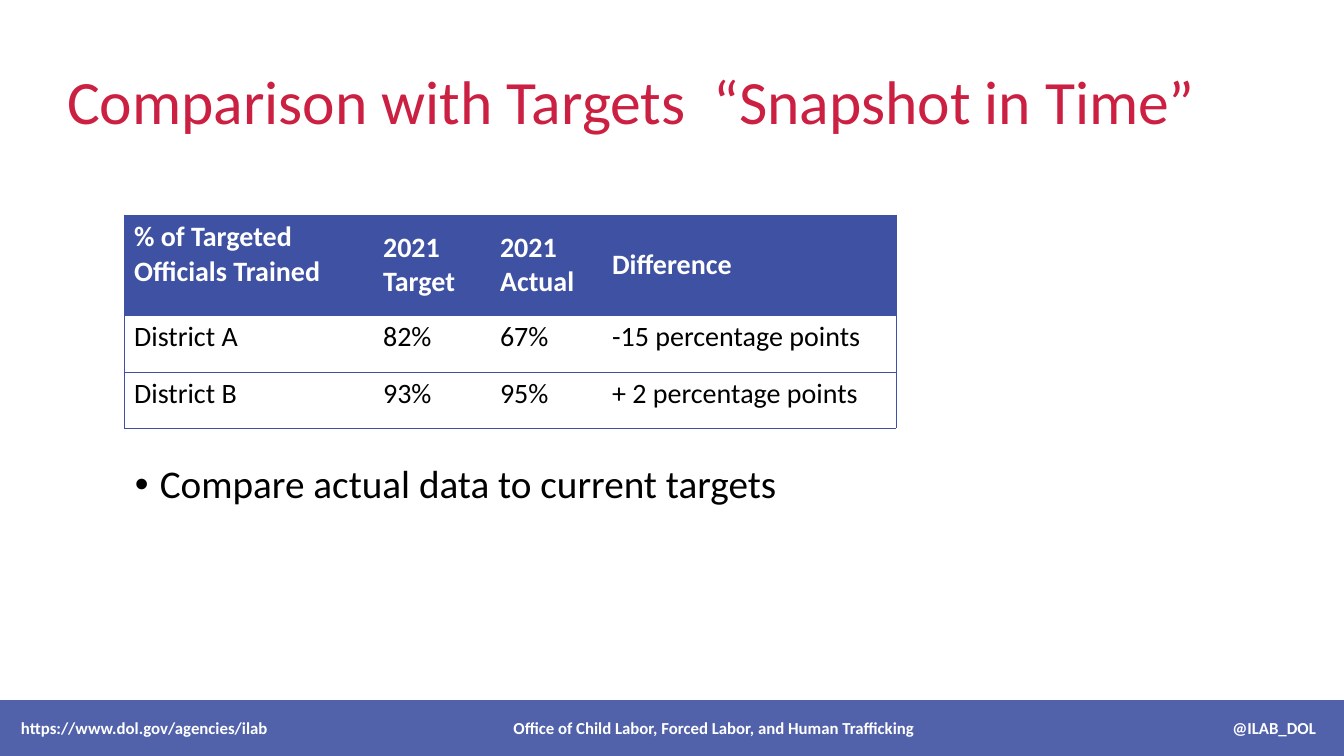
from lxml.etree import SubElement
from pptx import Presentation
from pptx.dml.color import RGBColor
from pptx.enum.shapes import MSO_SHAPE
from pptx.enum.text import MSO_ANCHOR, MSO_AUTO_SIZE, PP_ALIGN
from pptx.oxml import parse_xml
from pptx.oxml.ns import nsdecls, qn
from pptx.util import Pt

EMU_PER_PX = 914400 / 100.8
BLUE = RGBColor(0x3F, 0x51, 0xA2)
RED = RGBColor(0xCB, 0x20, 0x42)
WHITE = RGBColor(0xFF, 0xFF, 0xFF)
BLACK = RGBColor(0x00, 0x00, 0x00)
FONT = "Calibri"
PLAIN_TABLE_STYLE = "{2D5ABB26-0587-4C30-8999-92F81FD0307C}"
COLUMN_WIDTHS = (249, 117, 112, 294)
ROW_HEIGHTS = (100, 57, 56)
TABLE_ROWS = (
    ("% of Targeted Officials Trained", "2021\nTarget", "2021\nActual", "Difference"),
    ("District A", "82%", "67%", "-15 percentage points"),
    ("District B", "93%", "95%", "+ 2 percentage points"),
)
FOOTER_TEXTS = (
    "https://www.dol.gov/agencies/ilab",
    "Office of Child Labor, Forced Labor, and Human Trafficking",
    "@ILAB_DOL",
)


def px(length):
    return round(length * EMU_PER_PX)


def box_emu(box):
    return [px(length) for length in box]


def set_attributes(target, values):
    for name, value in values.items():
        setattr(target, name, value)


def write_text(text_frame, text, size, color, bold=False, **paragraph_format):
    text_frame.text = text
    for paragraph in text_frame.paragraphs:
        set_attributes(paragraph, {"alignment": PP_ALIGN.LEFT, **paragraph_format})
        for run in paragraph.runs:
            set_attributes(run.font, {"name": FONT, "size": Pt(size), "bold": bold})
            run.font.color.rgb = color


def add_title(slide, box):
    title = slide.shapes.title
    set_attributes(title, dict(zip(("left", "top", "width", "height"), box_emu(box))))
    set_attributes(title.text_frame, {
        "word_wrap": True,
        "auto_size": MSO_AUTO_SIZE.NONE,
        "vertical_anchor": MSO_ANCHOR.MIDDLE,
    })
    write_text(title.text_frame, "Comparison with Targets  “Snapshot in Time”",
               44, RED, line_spacing=0.9)


def add_cell_borders(cell, sides):
    properties = cell._tc.get_or_add_tcPr()
    for position, side in enumerate(sides):
        properties.insert(position, parse_xml(
            f'<a:ln{side} {nsdecls("a")} w="{Pt(0.5)}"><a:solidFill>'
            f'<a:srgbClr val="{BLUE}"/></a:solidFill></a:ln{side}>'))


def add_targets_table(slide, left, top):
    box = (left, top, sum(COLUMN_WIDTHS), sum(ROW_HEIGHTS))
    frame = slide.shapes.add_table(len(ROW_HEIGHTS), len(COLUMN_WIDTHS), *box_emu(box))
    table = frame.table
    table._tbl.tblPr.find(qn("a:tableStyleId")).text = PLAIN_TABLE_STYLE
    set_attributes(table, {"first_row": False, "horz_banding": False})
    for column, width in zip(table.columns, COLUMN_WIDTHS):
        column.width = px(width)
    for row, height in zip(table.rows, ROW_HEIGHTS):
        row.height = px(height)
    last_column = len(COLUMN_WIDTHS) - 1
    for row_index, texts in enumerate(TABLE_ROWS):
        header = row_index == 0
        for column_index, text in enumerate(texts):
            cell = table.cell(row_index, column_index)
            write_text(cell.text_frame, text, 20, WHITE if header else BLACK, header)
            centred = header and column_index > 0
            cell.vertical_anchor = MSO_ANCHOR.MIDDLE if centred else MSO_ANCHOR.TOP
            if header:
                cell.fill.solid()
                cell.fill.fore_color.rgb = BLUE
            else:
                cell.fill.background()
            sides = ["L"] if column_index == 0 else []
            sides += ["R"] if column_index == last_column else []
            add_cell_borders(cell, sides + ["T", "B"])


def add_bullet(slide, box, text):
    text_frame = slide.shapes.add_textbox(*box_emu(box)).text_frame
    text_frame.word_wrap = True
    write_text(text_frame, text, 28, BLACK, line_spacing=0.9)
    properties = text_frame.paragraphs[0]._p.get_or_add_pPr()
    properties.set("marL", str(px(25)))
    properties.set("indent", str(px(-25)))
    SubElement(properties, qn("a:buFont"), typeface="Arial")
    SubElement(properties, qn("a:buChar"), char="•")


def add_footer(slide, box):
    margin = 21
    bar = slide.shapes.add_shape(MSO_SHAPE.RECTANGLE, *box_emu(box))
    bar.shadow.inherit = False
    bar.line.fill.background()
    bar.fill.solid()
    bar.fill.fore_color.rgb = BLUE
    color = bar.fill._xPr.find(qn("a:solidFill"))[0]
    SubElement(color, qn("a:alpha"), val="90000")
    set_attributes(bar.text_frame, {
        "word_wrap": True,
        "margin_left": px(margin),
        "margin_right": px(margin),
        "vertical_anchor": MSO_ANCHOR.MIDDLE,
    })
    write_text(bar.text_frame, "\t".join(FOOTER_TEXTS), 12, WHITE, True)
    properties = bar.text_frame.paragraphs[0]._p.get_or_add_pPr()
    tabs = SubElement(properties, qn("a:tabLst"))
    for position, alignment in ((714, "ctr"), (1316, "r")):
        SubElement(tabs, qn("a:tab"), pos=str(px(position - margin)), algn=alignment)


def main():
    presentation = Presentation()
    set_attributes(presentation, {"slide_width": px(1344), "slide_height": px(756)})
    slide = presentation.slides.add_slide(presentation.slide_layouts[5])
    add_footer(slide, (0, 700, 1348, 56))
    add_title(slide, (57, 32, 1159, 146))
    add_bullet(slide, (125, 460, 772, 60), "Compare actual data to current targets")
    add_targets_table(slide, 124, 215)
    presentation.save("out.pptx")


if __name__ == "__main__":
    main()
